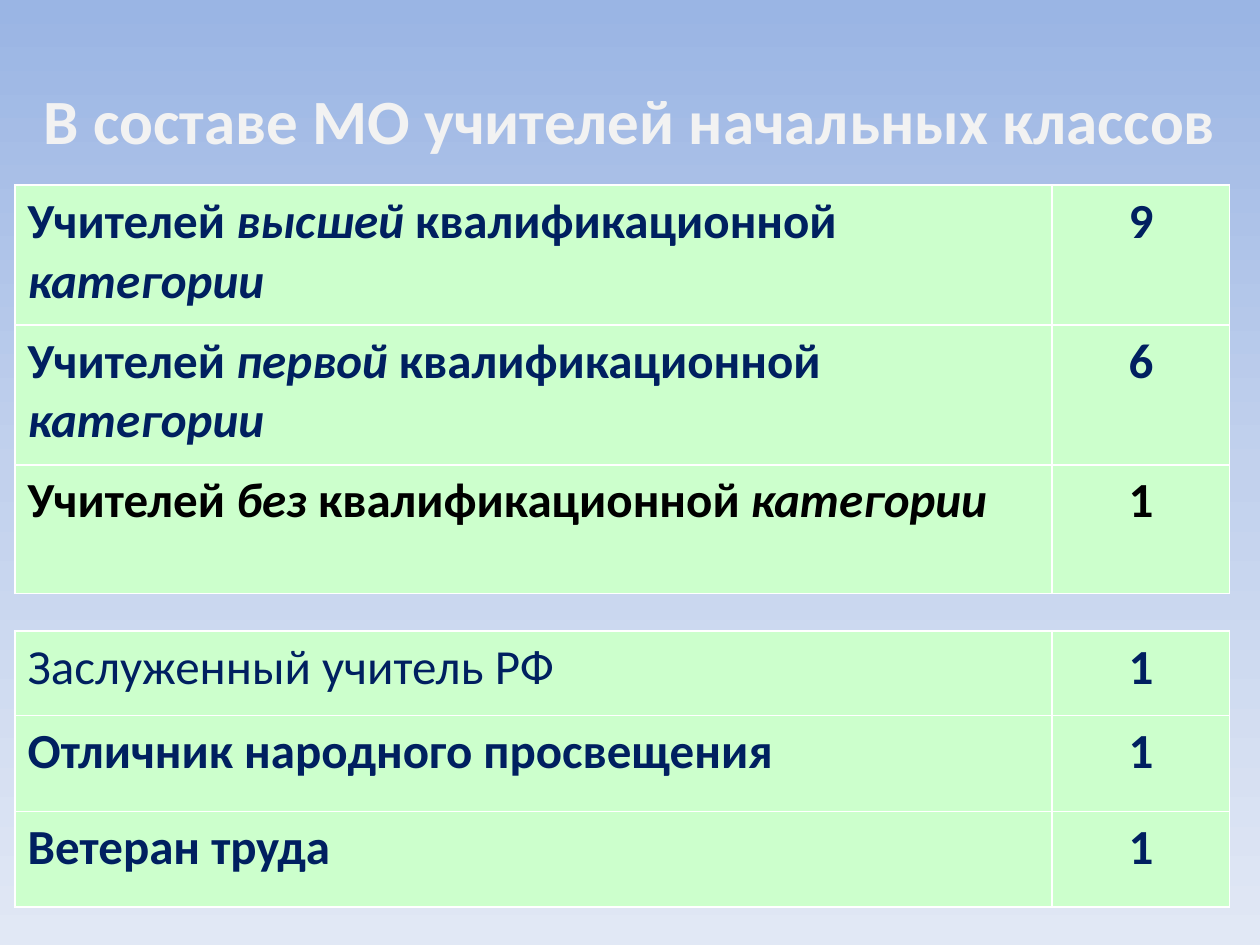
from lxml import etree
from pptx import Presentation
from pptx.dml.color import RGBColor
from pptx.enum.text import MSO_ANCHOR, MSO_AUTO_SIZE, PP_ALIGN
from pptx.oxml.ns import qn
from pptx.util import Inches, Pt

LEFT, CENTER = PP_ALIGN.LEFT, PP_ALIGN.CENTER
NAVY = RGBColor(0x00, 0x20, 0x60)
BLACK = RGBColor(0x00, 0x00, 0x00)
MINT = RGBColor(0xCC, 0xFF, 0xCC)
WHITE = RGBColor(0xFF, 0xFF, 0xFF)
PALE = RGBColor(0xF2, 0xF2, 0xF2)
SKY = [(0, RGBColor(0x9A, 0xB5, 0xE4)), (50, RGBColor(0xC2, 0xD1, 0xED)),
       (100, RGBColor(0xE1, 0xE8, 0xF5))]
FONT = "Calibri"

# Content: text pieces alternate between upright and italic
TITLE = "В составе МО учителей начальных классов"
CATEGORIES = [
    (["Учителей ", "высшей ", "квалификационной ", "категории"], "9", {}),
    (["Учителей ", "первой ", "квалификационной ", "категории"], "6", {}),
    (["Учителей ", "без", " квалификационной ", "категории"], "1", {"color": BLACK}),
]
AWARDS = [
    (["Заслуженный учитель РФ"], "1", {"bold": False}),
    (["Отличник народного просвещения"], "1", {}),
    (["Ветеран труда"], "1", {}),
]

# Grid in inches
TABLE_LEFT = 0.12
COLUMNS = [8.23, 1.41]
TABLES = [(CATEGORIES, 1.47, [1.11, 1.11, 1.02]),
          (AWARDS, 5.01, [0.67, 0.76, 0.76])]


def write(frame, pieces, size=28, color=NAVY, bold=True, align=LEFT):
    para = frame.paragraphs[0]
    para.alignment = align
    for index, piece in enumerate(pieces):
        span = para.add_run()
        span.text = piece
        font = span.font
        font.name, font.size, font.bold = FONT, Pt(size), bold
        font.italic = index % 2 == 1
        font.color.rgb = color


def paint_cell(cell):
    properties = cell._tc.get_or_add_tcPr()
    for side in ("a:lnL", "a:lnR", "a:lnT", "a:lnB"):
        line = etree.SubElement(properties, qn(side), w=str(Pt(1)))
        fill = etree.SubElement(line, qn("a:solidFill"))
        etree.SubElement(fill, qn("a:srgbClr"), val=str(WHITE))
    cell.fill.solid()
    cell.fill.fore_color.rgb = MINT


def add_grid(page, rows, top, heights):
    frame = page.shapes.add_table(
        len(rows), len(COLUMNS), Inches(TABLE_LEFT), Inches(top),
        Inches(sum(COLUMNS)), Inches(sum(heights)))
    table = frame.table
    table.first_row = table.horz_banding = False
    for column, width in zip(table.columns, COLUMNS):
        column.width = Inches(width)
    for index, (pieces, count, style) in enumerate(rows):
        table.rows[index].height = Inches(heights[index])
        label, number = table.cell(index, 0), table.cell(index, 1)
        write(label.text_frame, pieces, **style)
        write(number.text_frame, [count], align=CENTER, **{**style, "bold": True})
        paint_cell(label)
        paint_cell(number)


def paint_background(page):
    fill = page.background.fill
    fill.gradient()
    fill.gradient_angle = 270
    stops = next(page.element.iter(qn("a:gsLst")))
    for stop in list(stops):
        stops.remove(stop)
    for percent, color in SKY:
        stop = etree.SubElement(stops, qn("a:gs"), pos=str(percent * 1000))
        etree.SubElement(stop, qn("a:srgbClr"), val=str(color))


def main():
    deck = Presentation()
    deck.slide_width, deck.slide_height = Inches(10), Inches(7.5)
    page = deck.slides.add_slide(deck.slide_layouts[5])
    paint_background(page)

    # Title across the full width
    title = page.shapes.title
    title.left, title.top = Inches(0), Inches(0.6)
    title.width, title.height = deck.slide_width, Inches(0.71)
    frame = title.text_frame
    frame.word_wrap = True
    frame.auto_size = MSO_AUTO_SIZE.SHAPE_TO_FIT_TEXT
    frame.vertical_anchor = MSO_ANCHOR.TOP
    write(frame, [TITLE], size=36, color=PALE, align=CENTER)

    # Qualification and award tables
    for rows, top, heights in TABLES:
        add_grid(page, rows, top, heights)

    deck.save("out.pptx")


if __name__ == "__main__":
    main()
